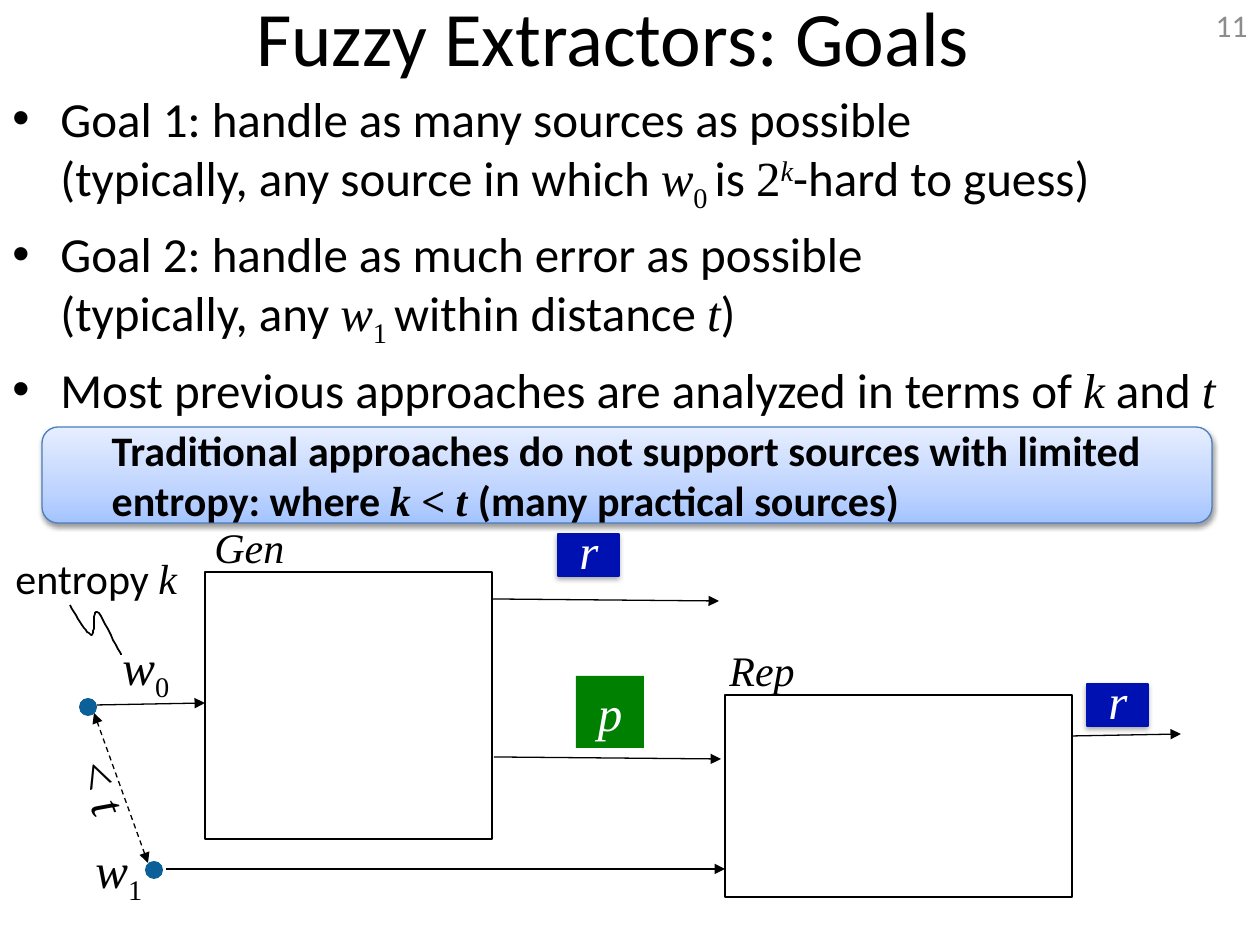
import pptx
import pptx.util
import pptx.dml.color
import pptx.enum.dml
import pptx.enum.shapes
import pptx.enum.text
import pptx.oxml
import pptx.oxml.ns
import lxml.etree
import copy

PX = 914400 // 126
RGB = pptx.dml.color.RGBColor
BLACK = RGB(0x00, 0x00, 0x00)
WHITE = RGB(0xFF, 0xFF, 0xFF)
GREY = RGB(0x8C, 0x8C, 0x8C)
GREEN = RGB(0x00, 0x80, 0x00)
DOT_BLUE = RGB(0x0B, 0x60, 0x9A)
KEY_BLUE = RGB(0x00, 0x11, 0xB2)
EDGE_BLUE = RGB(0x4B, 0x7E, 0xBC)
GRADIENT = [(0, RGB(0xA4, 0xC4, 0xFF)), (0.35, RGB(0xBF, 0xD4, 0xFF)), (1, RGB(0xE6, 0xEE, 0xFF))]
MSO = pptx.enum.shapes.MSO_SHAPE
ALIGN = pptx.enum.text.PP_ALIGN
ANCHOR = pptx.enum.text.MSO_ANCHOR
Pt = pptx.util.Pt
qn = pptx.oxml.ns.qn
BASELINE = {"sub": "-25000", "sup": "30000"}

prs = pptx.Presentation()
prs.slide_width, prs.slide_height = 1260 * PX, 945 * PX
s = prs.slides.add_slide(prs.slide_layouts[6])


def text(sp, *paragraphs, size=28, color=BLACK, bold=False, align=ALIGN.LEFT,
         anchor=ANCHOR.TOP, wrap=True):
    tf = sp.text_frame
    tf.word_wrap = wrap
    tf.vertical_anchor = anchor
    for i, runs in enumerate(paragraphs):
        p = tf.paragraphs[0] if i == 0 else tf.add_paragraph()
        p.alignment = align
        for content, style in runs:
            if content == "\n":
                p.add_line_break()
                continue
            r = p.add_run()
            r.text = content
            r.font.name = "Calibri" if style == "sans" else "Times New Roman"
            r.font.size = Pt(size)
            r.font.bold = bold
            r.font.italic = style in ("italic", "sup")
            r.font.color.rgb = color
            if style in BASELINE:
                r._r.get_or_add_rPr().set("baseline", BASELINE[style])
    return tf


def shape(kind, x, y, w, h, fill=None, line=None, shadow=0):
    sp = s.shapes.add_shape(kind, x * PX, y * PX, w * PX, h * PX)
    sp.shadow.inherit = False
    if fill is None:
        sp.fill.background()
    else:
        sp.fill.solid()
        sp.fill.fore_color.rgb = fill
    if line is None:
        sp.line.fill.background()
    else:
        sp.line.color.rgb = line
        sp.line.width = Pt(0.75)
    if shadow:
        effects = sp._element.spPr.find(qn("a:effectLst"))
        outer = lxml.etree.SubElement(effects, qn("a:outerShdw"), blurRad=str(Pt(3.1)),
                                      dist=str(Pt(1.7)), dir="5400000", rotWithShape="0")
        clr = lxml.etree.SubElement(outer, qn("a:srgbClr"), val="000000")
        lxml.etree.SubElement(clr, qn("a:alpha"), val=str(shadow * 1000))
    return sp


title = s.shapes.add_textbox(-68 * PX, -23 * PX, 1362 * PX, 118 * PX)
text(title, [("Fuzzy Extractors: Goals", "sans")], size=44, align=ALIGN.CENTER, anchor=ANCHOR.MIDDLE)

goals = s.shapes.add_textbox(0, 82 * PX, 1309 * PX, 324 * PX)
tf = text(
    goals,
    [("Goal 1: handle as many sources as possible", "sans"), ("\n", ""),
     ("(typically, any source in which ", "sans"), ("w", "italic"), ("0 ", "sub"), ("is ", "sans"),
     ("2", "serif"), ("k", "sup"), ("-hard to guess)", "sans")],
    [("Goal 2: handle as much error as possible", "sans"), ("\n", ""),
     ("(typically, any ", "sans"), ("w", "italic"), ("1 ", "sub"),
     ("within distance ", "sans"), ("t", "italic"), (")", "sans")],
    [("Most previous approaches are analyzed in terms of ", "sans"), ("k", "italic"),
     (" and ", "sans"), ("t", "italic")])
for i, p in enumerate(tf.paragraphs):
    p.space_before = Pt(5.6 if i else 0)
    pPr = p._p.get_or_add_pPr()
    pPr.set("marL", str(48 * PX))
    pPr.set("indent", str(-48 * PX))
    lxml.etree.SubElement(pPr, qn("a:buFont"), typeface="Arial")
    lxml.etree.SubElement(pPr, qn("a:buChar"), char="•")

for x1, y1, x2, y2, double in [
        (97, 705, 205, 703, False), (492, 599, 719, 601, False), (494, 757, 721, 759, False),
        (166, 869, 725, 869, False), (1072, 736, 1181, 734, False), (148, 863, 94, 713, True)]:
    c = s.shapes.add_connector(pptx.enum.shapes.MSO_CONNECTOR.STRAIGHT, x1 * PX, y1 * PX, x2 * PX, y2 * PX)
    c.line.color.rgb = BLACK
    c.line.width = Pt(0.75)
    if double:
        c.line.dash_style = pptx.enum.dml.MSO_LINE.DASH
    ln = c.line._get_or_add_ln()
    for end in ["headEnd", "tailEnd"] if double else ["tailEnd"]:
        lxml.etree.SubElement(ln, qn("a:" + end), type="triangle")
    lxml.etree.SubElement(c._element.spPr, qn("a:effectLst"))

for x, y in [(79, 698), (145, 861)]:
    shape(MSO.OVAL, x, y, 18, 18, fill=DOT_BLUE)
for x, y, w, h in [(205, 572, 287, 267), (725, 695, 347, 202)]:
    shape(MSO.RECTANGLE, x, y, w, h, line=BLACK)

helper = shape(MSO.RECTANGLE, 576, 676, 68, 72, fill=GREEN)
text(helper, [("p", "italic")], color=WHITE, align=ALIGN.CENTER, wrap=False)

for x, y, w, h, angle, size, runs in [
        (110, 630, 81, 72, 0, 28, [("w", "italic"), ("0", "sub")]),
        (83, 833, 81, 72, 0, 28, [("w", "italic"), ("1", "sub")]),
        (64, 753, 82, 72, 69.7, 28, [("< ", "serif"), ("t", "italic")]),
        (202, 515, 110, 63, 0, 24, [("Gen", "italic")]),
        (717, 638, 106, 63, 0, 24, [("Rep", "italic")]),
        (3, 546, 193, 63, 0, 24, [("entropy ", "sans"), ("k", "italic")])]:
    sp = s.shapes.add_textbox(x * PX, y * PX, w * PX, h * PX)
    sp.rotation = angle
    text(sp, runs, size=size, wrap=False)

points = [(70, 605)]
for curve in [((78, 619), (87, 634), (91, 635)), ((96, 636), (92, 609), (97, 612)),
              ((102, 615), (121, 655), (121, 655))]:
    a, (b, c, d) = points[-1], curve
    for step in range(1, 13):
        t = step / 12
        u = 1 - t
        points.append(tuple(u**3 * a[k] + 3 * u * u * t * b[k] + 3 * u * t * t * c[k] + t**3 * d[k]
                            for k in (0, 1)))
fb = s.shapes.build_freeform(points[0][0], points[0][1], scale=PX)
fb.add_line_segments(points[1:], close=False)
squiggle = fb.convert_to_shape()
squiggle.shadow.inherit = False
squiggle.fill.background()
squiggle.line.color.rgb = BLACK
squiggle.line.width = Pt(1)

callout = shape(MSO.ROUNDED_RECTANGLE, 42, 427, 1170, 96, line=EDGE_BLUE, shadow=38)
callout.fill.gradient()
callout.fill.gradient_angle = 90
first = callout.fill.gradient_stops[0]._gs
first.addnext(copy.deepcopy(first))
for stop, (position, color) in zip(callout.fill.gradient_stops, GRADIENT):
    stop.position = position
    stop.color.rgb = color
tf = text(callout,
          [("Traditional approaches do not support sources with limited entropy: where ", "sans"),
           ("k ", "italic"), ("<", "serif"), (" t ", "italic"), ("(many practical sources)", "sans")],
          size=24, bold=True, anchor=ANCHOR.MIDDLE)
tf.margin_left = 65 * PX
tf.margin_right = tf.margin_top = tf.margin_bottom = 6 * PX

for x, y in [(558, 534), (1087, 684)]:
    shape(MSO.RECTANGLE, x, y, 61, 42, fill=KEY_BLUE, line=KEY_BLUE, shadow=35)
    sp = s.shapes.add_textbox((x + 9) * PX, (y - 20) * PX, 61 * PX, 72 * PX)
    text(sp, [("r", "italic")], color=WHITE)

number = s.shapes.add_textbox(966 * PX, 0, 294 * PX, 50 * PX)
text(number, [("11", "sans")], size=18, color=GREY, align=ALIGN.RIGHT, anchor=ANCHOR.MIDDLE)

prs.save("out.pptx")
